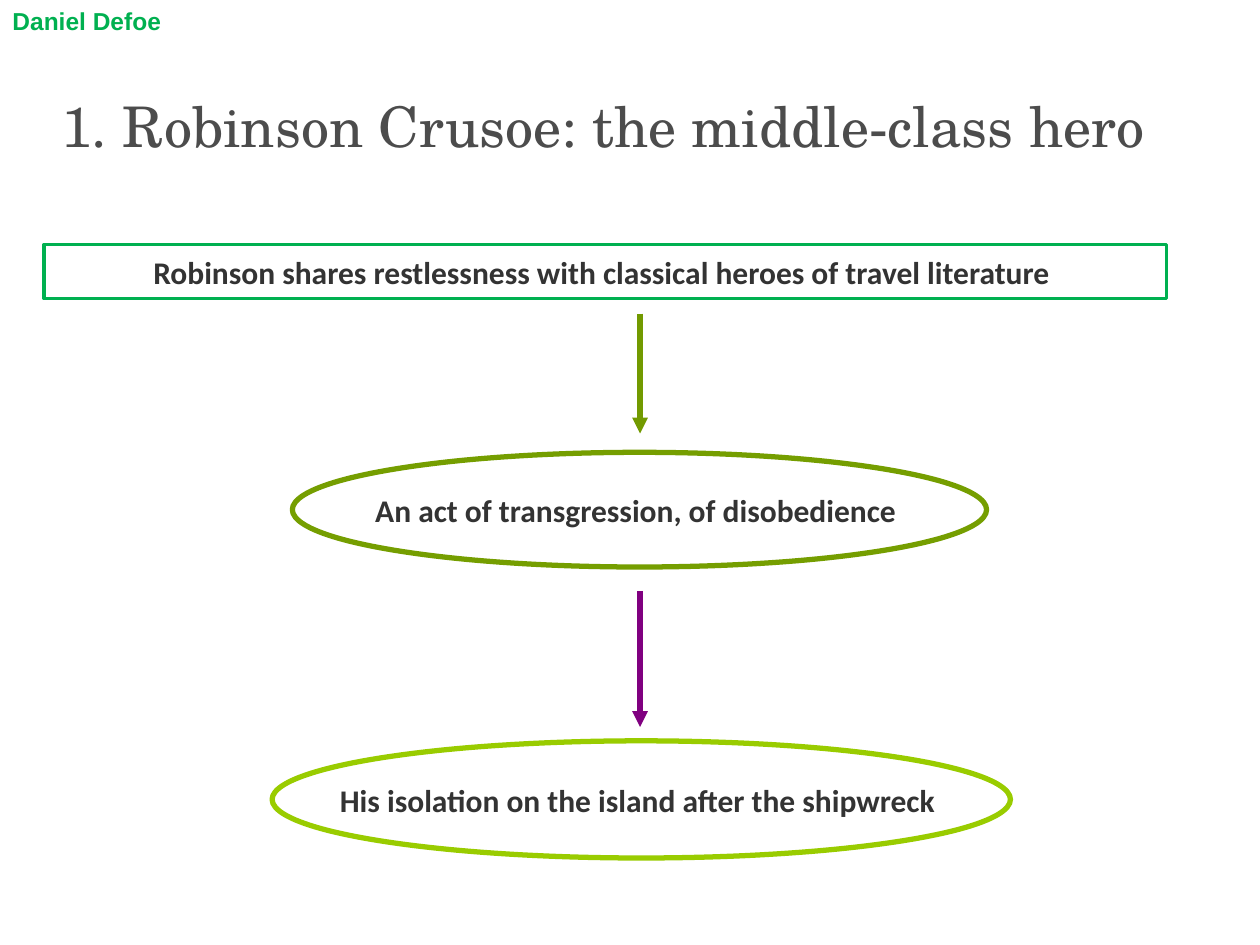
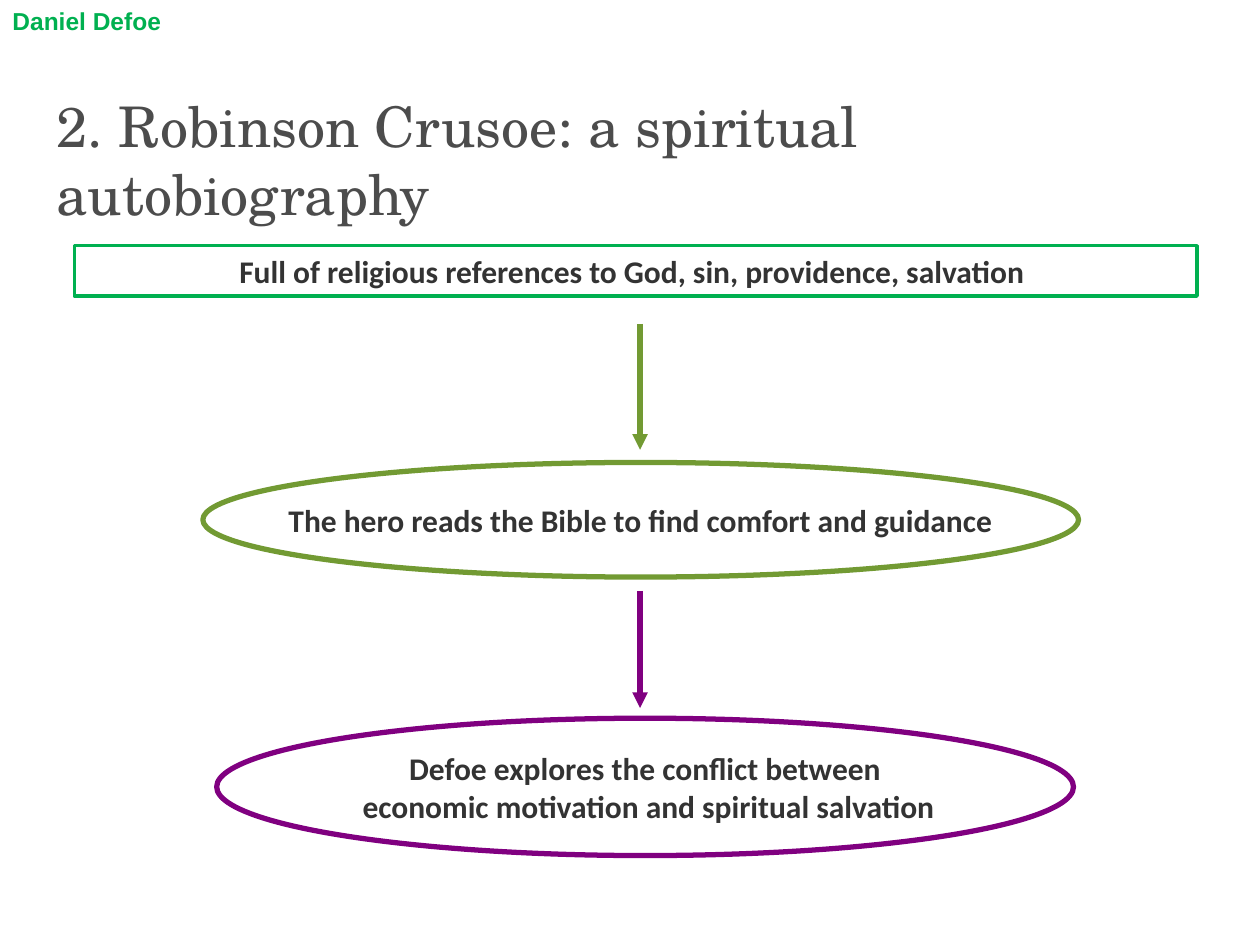
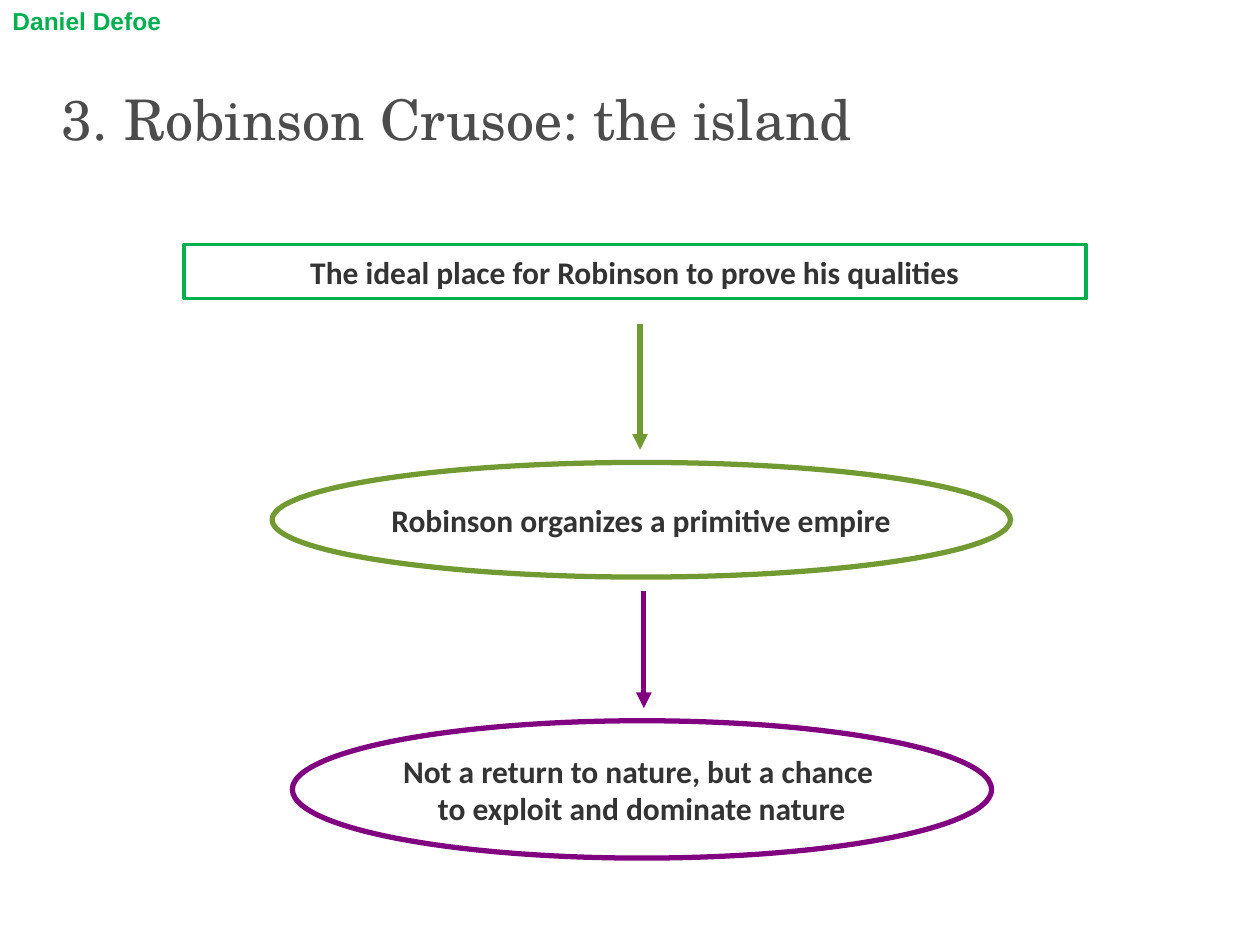
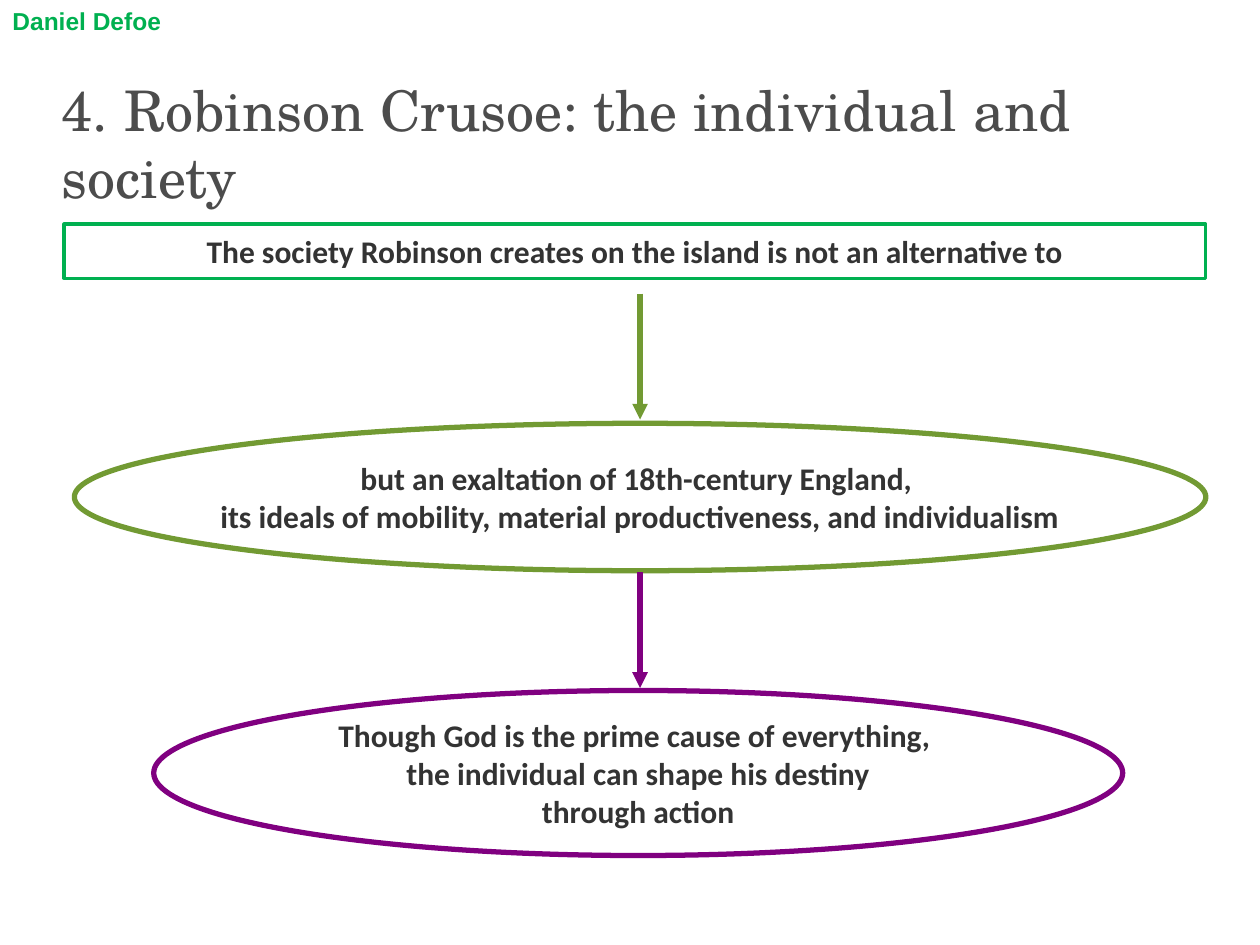
from pptx import Presentation
from pptx.dml.color import RGBColor
from pptx.enum.shapes import MSO_CONNECTOR, MSO_SHAPE
from pptx.enum.text import MSO_ANCHOR, MSO_AUTO_SIZE, PP_ALIGN
from pptx.oxml.ns import qn
from pptx.util import Inches, Pt
from lxml.etree import SubElement

# Shared colours
INK = RGBColor(0x33, 0x33, 0x33)
GREY = RGBColor(0x4C, 0x4C, 0x4C)
GREEN = RGBColor(0x00, 0xB0, 0x50)
LEAF = RGBColor(0x75, 0x9E, 0x00)
OLIVE = RGBColor(0x72, 0x9A, 0x00)
MOSS = RGBColor(0x72, 0x9A, 0x33)
LIME = RGBColor(0x99, 0xCC, 0x00)
PURPLE = RGBColor(0x80, 0x00, 0x80)

AXIS = 5.08  # x of the arrows

# Each slide: a title, a claim in a box, then steps of an arrow and an oval.
# Boxes are (left, top, width, height); arrows are (x, top, bottom).
SLIDES = [
    dict(
        title=("1. Robinson Crusoe: the middle-class hero", (0.39, 0.68, 9.06, 0.63)),
        claim=("Robinson shares restlessness with classical heroes of travel literature ",
               (0.35, 1.94, 8.91, 0.43)),
        steps=[
            ((AXIS, 2.49, 3.44), OLIVE, "An act of transgression, of disobedience ",
             (2.32, 3.59, 5.51, 0.91), LEAF),
            ((AXIS, 4.69, 5.77), PURPLE, "His isolation on the island after the shipwreck ",
             (2.16, 5.88, 5.86, 0.93), LIME),
        ]),
    dict(
        title=("2. Robinson Crusoe: a spiritual autobiography", (0.35, 0.68, 9.22, 1.18)),
        claim=("Full of religious references to God, sin, providence, salvation ",
               (0.59, 1.95, 8.91, 0.4)),
        steps=[
            ((AXIS, 2.57, 3.57), MOSS, "The hero reads the Bible to find comfort and guidance",
             (1.61, 3.67, 6.95, 0.91), MOSS),
            ((AXIS, 4.69, 5.62), PURPLE,
             "Defoe explores the conflict between\n economic motivation and spiritual salvation",
             (1.72, 5.7, 6.8, 1.09), PURPLE),
        ]),
    dict(
        title=("3. Robinson Crusoe: the island", (0.39, 0.62, 9.22, 0.64)),
        claim=("The ideal place for Robinson to prove his qualities", (1.46, 1.94, 7.16, 0.43)),
        steps=[
            ((AXIS, 2.57, 3.57), MOSS, "Robinson organizes a primitive empire",
             (2.16, 3.67, 5.86, 0.91), MOSS),
            ((5.11, 4.69, 5.62), PURPLE,
             "Not a return to nature, but a chance \nto exploit and dominate nature",
             (2.32, 5.72, 5.55, 1.09), PURPLE),
        ]),
    dict(
        title=("4. Robinson Crusoe: the individual and society", (0.39, 0.55, 9.38, 1.18)),
        claim=("The society Robinson creates on the island is not an alternative to",
               (0.51, 1.78, 9.06, 0.43)),
        steps=[
            ((AXIS, 2.33, 3.33), MOSS,
             "but an exaltation of 18th-century England, \n"
             "its ideals of mobility, material productiveness, and individualism",
             (0.59, 3.36, 8.98, 1.17), MOSS),
            ((AXIS, 4.54, 5.46), PURPLE,
             "Though God is the prime cause of everything, \n"
             "the individual can shape his destiny\nthrough action",
             (1.22, 5.48, 7.69, 1.31), PURPLE),
        ]),
]


def span(box):
    return [Inches(n) for n in box]


def write(shape, text, font="Calibri", size=18, color=INK, bold=True,
          align=PP_ALIGN.CENTER, anchor=MSO_ANCHOR.MIDDLE, wrap=True):
    """Fill a shape with text, one paragraph a line."""
    frame = shape.text_frame
    frame.text = text
    frame.word_wrap = wrap
    frame.auto_size = MSO_AUTO_SIZE.NONE
    frame.vertical_anchor = anchor
    for para in frame.paragraphs:
        para.alignment = align
        style = para.font
        style.name, style.size, style.bold = font, Pt(size), bold
        style.color.rgb = color


def head(slide, text, box):
    title = slide.shapes.title
    title.left, title.top, title.width, title.height = span(box)
    write(title, text, font="TeX Gyre Schola", size=32, color=GREY, bold=False,
          align=PP_ALIGN.LEFT, anchor=MSO_ANCHOR.TOP)


def label(slide):
    """Author's name in the top left corner."""
    box = slide.shapes.add_textbox(*span((0, 0, 1.41, 0.33)))
    write(box, "Daniel Defoe", font="Arial", size=14, color=GREEN,
          align=PP_ALIGN.LEFT, anchor=MSO_ANCHOR.TOP)


def node(slide, kind, text, box, color, width, wrap):
    """Outlined shape with centred text."""
    shape = slide.shapes.add_shape(kind, *span(box))
    shape.shadow.inherit = False
    shape.fill.background()
    shape.line.color.rgb = color
    shape.line.width = Pt(width)
    write(shape, text, wrap=wrap)


def arrow(slide, x, top, end, color):
    link = slide.shapes.add_connector(MSO_CONNECTOR.STRAIGHT, *span((x, top, x, end)))
    link.line.color.rgb = color
    link.line.width = Pt(3)
    props = link._element.spPr
    SubElement(props.find(qn("a:ln")), qn("a:tailEnd"), type="triangle")
    SubElement(props, qn("a:effectLst"))


def main():
    deck = Presentation()
    deck.slide_width, deck.slide_height = Inches(10), Inches(7.5)
    layout = deck.slide_layouts.get_by_name("Title Only")
    for plan in SLIDES:
        slide = deck.slides.add_slide(layout)
        head(slide, *plan["title"])
        node(slide, MSO_SHAPE.RECTANGLE, *plan["claim"], GREEN, 2, True)
        for line, tint, text, box, color in plan["steps"]:
            arrow(slide, *line, tint)
            node(slide, MSO_SHAPE.OVAL, text, box, color, 3, False)
        label(slide)
    deck.save("out.pptx")


if __name__ == "__main__":
    main()
